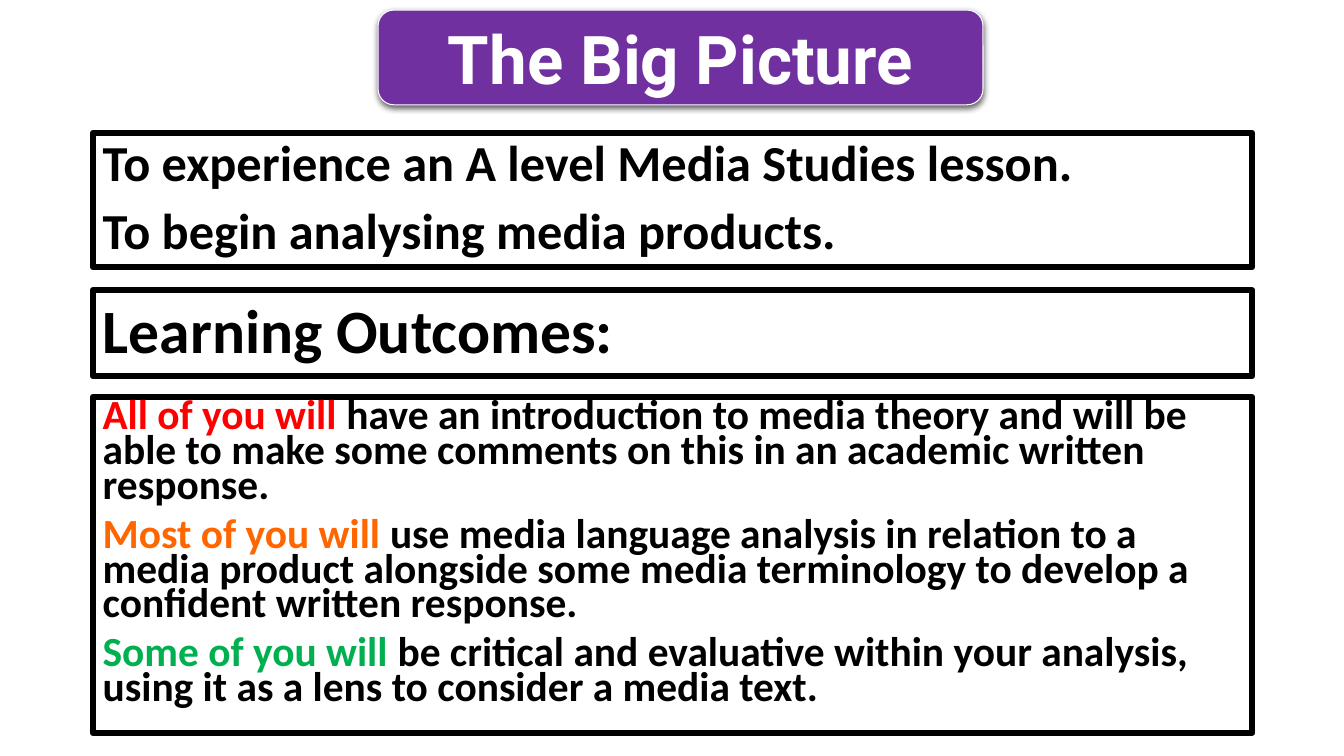
from lxml.etree import SubElement
from pptx import Presentation
from pptx.dml.color import RGBColor
from pptx.enum.shapes import MSO_SHAPE
from pptx.enum.text import MSO_ANCHOR, MSO_AUTO_SIZE, PP_ALIGN
from pptx.oxml.ns import qn
from pptx.util import Inches, Pt

BLACK, WHITE, PURPLE = "000000", "FFFFFF", "7030A0"
HEADING = [[("Learning Outcomes:", BLACK)]]
AIMS = [
    [("To experience an A level Media Studies lesson.", BLACK)],
    [("To begin analysing media products.", BLACK)],
]
OUTCOMES = [
    [("All of you will ", "FF0000"),
     ("have an introduction to media theory and will be able to make some "
      "comments on this in an academic written response.", BLACK)],
    [("Most of you will ", "FF6600"),
     ("use media language analysis in relation to a media product alongside some "
      "media terminology to develop a confident written response.", BLACK)],
    [("Some of you will ", "00B050"),
     ("be critical and evaluative within your analysis, using it as a lens to "
      "consider a media text.", BLACK)],
]
BANNER = [[("The Big Picture", WHITE)]]
LEFT, WIDTH = 0.92, 11.5


def colour(value):
    return RGBColor.from_string(value)


def place(shape, left, top, width, height):
    shape.left, shape.top = Inches(left), Inches(top)
    shape.width, shape.height = Inches(width), Inches(height)


def outline(shape, value, weight):
    shape.line.color.rgb = colour(value)
    shape.line.width = Pt(weight)


def write(shape, paragraphs, size, font, spacing, anchor, align):
    frame = shape.text_frame
    frame.word_wrap = True
    frame.auto_size = MSO_AUTO_SIZE.NONE
    frame.vertical_anchor = anchor
    for index, spans in enumerate(paragraphs):
        para = frame.add_paragraph() if index else frame.paragraphs[0]
        para.alignment = align
        para.line_spacing = spacing
        para.space_before = Pt(10 if index else 0)
        for text, value in spans:
            span = para.add_run()
            span.text = text
            span.font.name = font
            span.font.size = Pt(size)
            span.font.bold = True
            span.font.color.rgb = colour(value)


def add_shadow(shape):
    effects = SubElement(shape._element.spPr, qn("a:effectLst"))
    shadow = SubElement(effects, qn("a:outerShdw"), blurRad=str(Pt(4.5)),
                        dist=str(Pt(1.5)), dir="5400000", rotWithShape="0")
    tint = SubElement(shadow, qn("a:srgbClr"), val=BLACK)
    SubElement(tint, qn("a:alpha"), val="63000")


deck = Presentation()
deck.slide_width, deck.slide_height = Inches(13.33), Inches(7.5)
page = deck.slides.add_slide(deck.slide_layouts[5])

title = page.shapes.title
aims, outcomes = [page.shapes.add_textbox(0, 0, 0, 0) for _ in range(2)]
panels = [
    (title, HEADING, 2.88, 0.85, 44, 0.9, MSO_ANCHOR.MIDDLE),
    (aims, AIMS, 1.32, 1.33, 36, 0.9, MSO_ANCHOR.TOP),
    (outcomes, OUTCOMES, 3.94, 3.33, 29.6, 0.7, MSO_ANCHOR.TOP),
]
for box, paragraphs, top, height, size, spacing, anchor in panels:
    place(box, LEFT, top, WIDTH, height)
    outline(box, BLACK, 4.5)
    write(box, paragraphs, size, "Calibri", spacing, anchor, PP_ALIGN.LEFT)

banner = page.shapes.add_shape(MSO_SHAPE.ROUNDED_RECTANGLE, 0, 0, 0, 0)
place(banner, 3.75, 0.1, 6, 0.94)
banner.fill.solid()
banner.fill.fore_color.rgb = colour(PURPLE)
outline(banner, WHITE, 0.75)
add_shadow(banner)
write(banner, BANNER, 48, "Roboto", 1.0, MSO_ANCHOR.MIDDLE, PP_ALIGN.CENTER)

deck.save("out.pptx")
